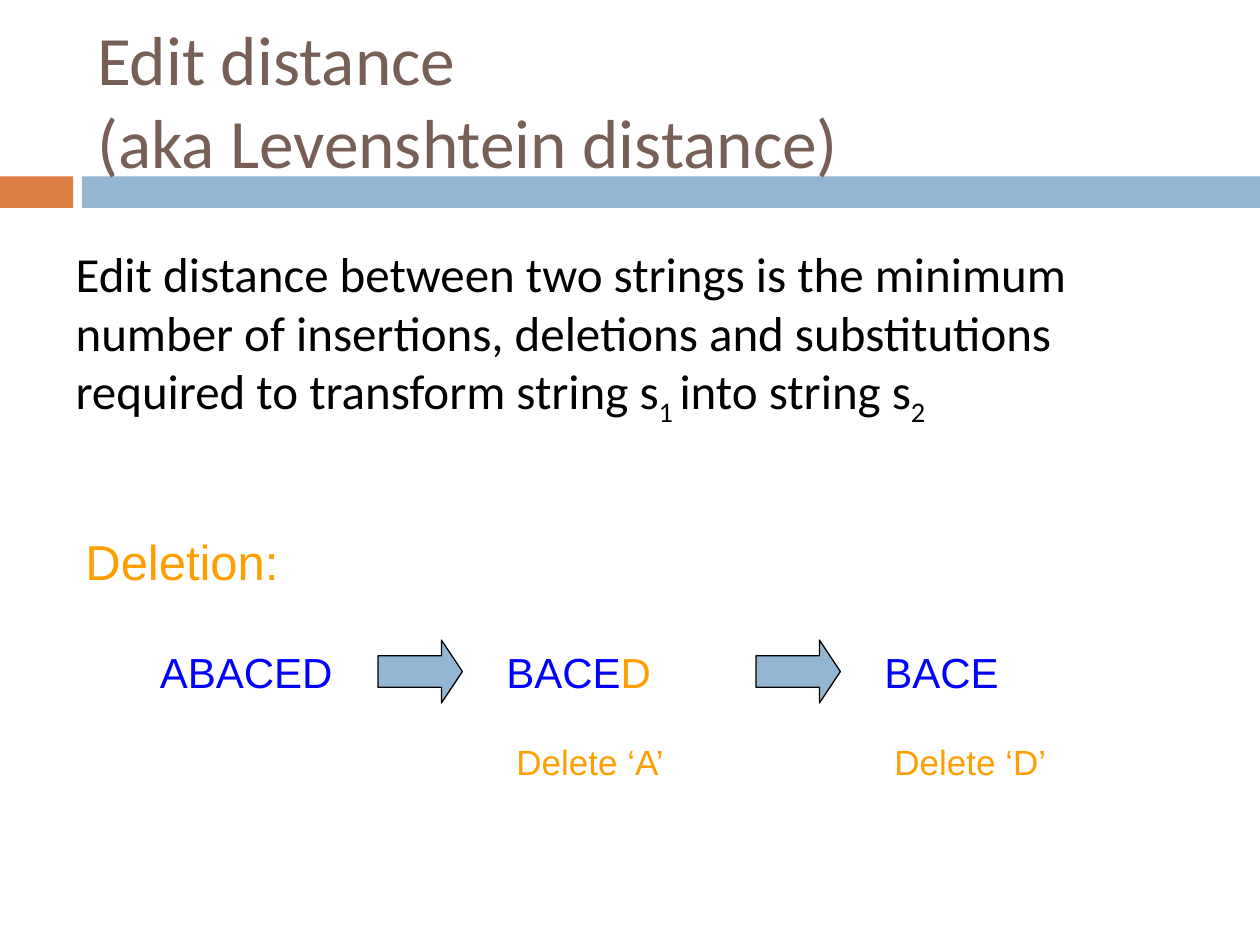
from pptx import Presentation
from pptx.dml.color import RGBColor
from pptx.enum.shapes import MSO_SHAPE
from pptx.enum.text import MSO_ANCHOR, MSO_AUTO_SIZE, PP_ALIGN
from pptx.oxml.ns import qn
from pptx.util import Inches, Pt

RECT, ARROW = MSO_SHAPE.RECTANGLE, MSO_SHAPE.RIGHT_ARROW
LEFT, MIDDLE, TOP = PP_ALIGN.LEFT, MSO_ANCHOR.MIDDLE, MSO_ANCHOR.TOP
NO_FIT = MSO_AUTO_SIZE.NONE
BLUE, GOLD, STEEL, RUST = "0000FF", "FF9E00", "94B6D2", "DD8047"


def paint(item, color):
    item.rgb = RGBColor.from_string(color)


def style(para, font, size, color):
    para.alignment = LEFT
    para.font.name = font
    para.font.size = Pt(size)
    paint(para.font.color, color)


def add_block(slide, kind, box, fill):
    shape = slide.shapes.add_shape(kind, *map(Inches, box))
    shape.shadow.inherit = False
    shape.fill.solid()
    paint(shape.fill.fore_color, fill)
    shape.line.fill.background()
    return shape


def add_bar(slide, left, width, fill):
    bar = add_block(slide, RECT, (left, 1.4, width, 0.25), fill)
    # Send behind the title
    bar.element.getparent().insert(2, bar.element)


def add_arrow(slide, left, top):
    arrow = add_block(slide, ARROW, (left, top, 0.67, 0.5), STEEL)
    arrow.adjustments[1] = 0.333
    paint(arrow.line.color, "000000")
    arrow.line.width = Pt(0.75)


def add_label(slide, box, text, size, color, tail=""):
    frame = slide.shapes.add_textbox(*map(Inches, box)).text_frame
    frame.word_wrap = True
    para = frame.paragraphs[0]
    style(para, "Arial", size, color)
    para.add_run().text = text
    if tail:
        run = para.add_run()
        run.text = tail
        paint(run.font.color, GOLD)


def set_holder(holder, box, anchor):
    holder.left, holder.top, holder.width, holder.height = map(Inches, box)
    frame = holder.text_frame
    frame.word_wrap = True
    frame.auto_size = NO_FIT
    frame.vertical_anchor = anchor
    return frame.paragraphs[0]


def set_title(slide):
    para = set_holder(slide.shapes.title, (0.67, 0.25, 8.92, 1.08), MIDDLE)
    para.text = "Edit distance\v(aka Levenshtein distance)"
    style(para, "Calibri", 39.6, "775F55")


def set_body(slide):
    para = set_holder(slide.placeholders[1], (0.5, 1.88, 9, 2.29), TOP)
    style(para, "Calibri", 28, "000000")
    props = para._p.get_or_add_pPr()
    props.set("marL", "0")
    props.set("indent", "0")
    props.insert_element_before(props.makeelement(qn("a:buNone"), {}), "a:defRPr")
    parts = [
        ("Edit distance between two strings is the minimum number of "
         "insertions, deletions and substitutions required to transform "
         "string s", False),
        ("1 ", True),
        ("into string s", False),
        ("2", True),
    ]
    for text, sub in parts:
        run = para.add_run()
        run.text = text
        if sub:
            run._r.get_or_add_rPr().set("baseline", "-25000")


def main():
    deck = Presentation()
    deck.slide_width, deck.slide_height = Inches(10), Inches(7.5)
    slide = deck.slides.add_slide(deck.slide_layouts[1])

    # Heading and definition
    set_title(slide)
    set_body(slide)
    add_bar(slide, 0, 0.58, RUST)
    add_bar(slide, 0.65, 9.35, STEEL)

    # Deletion example: one arrow, result and note per step
    row = 5.08
    add_label(slide, (0.58, 4.17, 1.83, 0.57), "Deletion:", 28, GOLD)
    add_label(slide, (1.17, row, 1.58, 0.5), "ABACED", 24, BLUE)
    steps = [("D", 1.92, "Delete ‘A’"), ("", 2.25, "Delete ‘D’")]
    for step, (tail, width, note) in enumerate(steps):
        left = 3 + 3 * step
        add_arrow(slide, left, row)
        add_label(slide, (left + 0.92, row, width, 0.5), "BACE", 24, BLUE, tail)
        add_label(slide, (left + 1, 5.83, 1.42, 0.77), note, 20, GOLD)

    deck.save("out.pptx")


if __name__ == "__main__":
    main()
